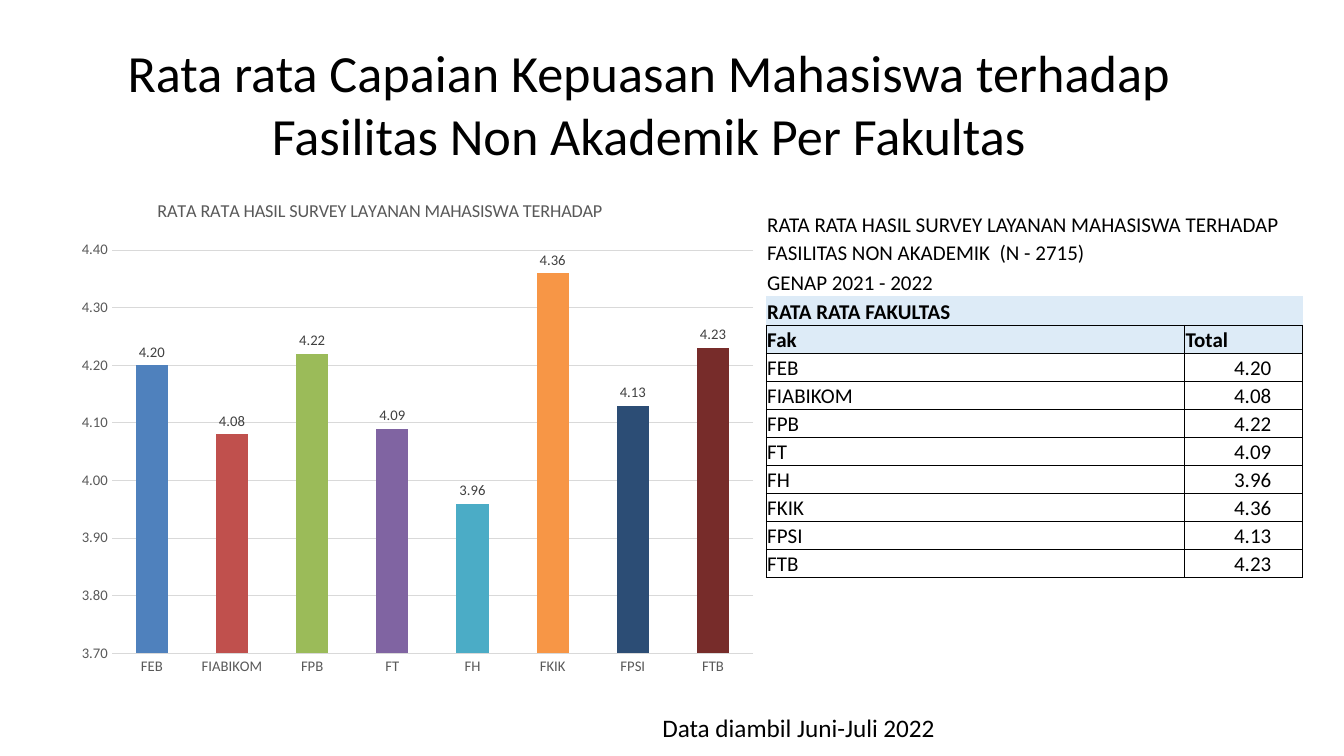
from dataclasses import dataclass
from typing import Any, Optional

import lxml.etree
import pptx
import pptx.chart.chart
import pptx.chart.data
import pptx.dml.color
import pptx.enum.chart
import pptx.enum.text
import pptx.oxml
import pptx.oxml.ns
import pptx.slide
import pptx.table
import pptx.text.text
import pptx.util

ALIGN = pptx.enum.text.PP_ALIGN
ANCHOR = pptx.enum.text.MSO_ANCHOR
SLIDE_WIDTH = pptx.util.Inches(13.33)
SLIDE_HEIGHT = pptx.util.Inches(7.5)


@dataclass(frozen=True)
class Theme:
    font: str = "Calibri"
    text: str = "000000"
    axis: str = "595959"
    label: str = "404040"
    grid: str = "D9D9D9"
    header: str = "DDEBF7"
    title_size: float = 37.3
    note_size: float = 18
    table_size: float = 15
    chart_title_size: float = 13
    chart_size: float = 10.5
    border_width: float = 0.5
    grid_width: float = 0.75


@dataclass(frozen=True)
class Region:
    left: float
    top: float
    width: float
    height: float

    def box(self) -> tuple[int, int, int, int]:
        return (
            round(SLIDE_WIDTH * self.left / 100),
            round(SLIDE_HEIGHT * self.top / 100),
            round(SLIDE_WIDTH * self.width / 100),
            round(SLIDE_HEIGHT * self.height / 100),
        )


@dataclass(frozen=True)
class Faculty:
    name: str
    score: float
    color: str


@dataclass(frozen=True)
class TableRow:
    first: str
    second: str = ""
    bold: bool = False
    fill: Optional[str] = None
    merged: bool = False
    borders: str = "LRTB"
    score: bool = False


THEME = Theme()
TITLE_REGION = Region(5.78, 2.93, 85, 21.47)
CHART_REGION = Region(4.65, 24.53, 52.44, 65.87)
TABLE_REGION = Region(57.01, 27.87, 39.91, 48.13)
NOTE_REGION = Region(48.54, 93.6, 22.28, 5.33)
FIRST_COLUMN_SHARE = 0.78
SURVEY = "RATA RATA HASIL SURVEY LAYANAN MAHASISWA TERHADAP"

FACULTIES = [
    Faculty("FEB", 4.20, "4F81BD"),
    Faculty("FIABIKOM", 4.08, "C0504D"),
    Faculty("FPB", 4.22, "9BBB59"),
    Faculty("FT", 4.09, "8064A2"),
    Faculty("FH", 3.96, "4BACC6"),
    Faculty("FKIK", 4.36, "F79646"),
    Faculty("FPSI", 4.13, "2C4D75"),
    Faculty("FTB", 4.23, "772C2A"),
]
TABLE_ROWS = [
    TableRow(SURVEY, merged=True, borders=""),
    TableRow("FASILITAS NON AKADEMIK  (N - 2715)", merged=True, borders=""),
    TableRow("GENAP 2021 - 2022", borders=""),
    TableRow("RATA RATA FAKULTAS", bold=True, fill=THEME.header, borders="B"),
    TableRow("Fak", "Total", bold=True, fill=THEME.header),
] + [TableRow(faculty.name, f"{faculty.score:.2f}", score=True) for faculty in FACULTIES]


def rgb(color: str) -> pptx.dml.color.RGBColor:
    return pptx.dml.color.RGBColor.from_string(color)


def format_font(font: pptx.text.text.Font, size: float, color: str, bold: bool = False) -> None:
    font.name = THEME.font
    font.size = pptx.util.Pt(size)
    font.bold = bold
    font.color.rgb = rgb(color)


def write_text(
    frame: pptx.text.text.TextFrame,
    text: str,
    *,
    size: float,
    color: str = THEME.text,
    bold: bool = False,
    alignment: Any = ALIGN.LEFT,
) -> None:
    paragraph = frame.paragraphs[0]
    paragraph.alignment = alignment
    run = paragraph.add_run()
    run.text = text
    format_font(run.font, size, color, bold)


def place_chart_part(parent: Any, index: int, **shares: float) -> None:
    for layout in parent.findall(pptx.oxml.ns.qn("c:layout")):
        parent.remove(layout)
    layout = pptx.oxml.parse_xml(
        f'<c:layout {pptx.oxml.ns.nsdecls("c")}><c:manualLayout/></c:layout>'
    )
    manual = layout[0]
    settings: dict[str, Any] = {"xMode": "edge", "yMode": "edge", **shares}
    if "w" in shares:
        settings = {"layoutTarget": "inner", **settings}
    for name, value in settings.items():
        lxml.etree.SubElement(manual, pptx.oxml.ns.qn(f"c:{name}")).set("val", str(value))
    parent.insert(index, layout)


def format_axis(axis: Any) -> None:
    axis.major_tick_mark = pptx.enum.chart.XL_TICK_MARK.NONE
    axis.minor_tick_mark = pptx.enum.chart.XL_TICK_MARK.NONE
    axis.format.line.fill.background()
    format_font(axis.tick_labels.font, THEME.chart_size, THEME.axis)


def add_score_chart(slide: pptx.slide.Slide) -> None:
    data = pptx.chart.data.CategoryChartData(number_format="0.00")
    data.categories = [faculty.name for faculty in FACULTIES]
    data.add_series("Series 1", [faculty.score for faculty in FACULTIES])
    chart = slide.shapes.add_chart(
        pptx.enum.chart.XL_CHART_TYPE.COLUMN_CLUSTERED, *CHART_REGION.box(), data
    ).chart
    format_font(chart.font, THEME.chart_size, THEME.text)
    chart.has_legend = False
    write_text(
        chart.chart_title.text_frame, SURVEY,
        size=THEME.chart_title_size, color=THEME.axis, alignment=ALIGN.CENTER,
    )
    title_element = chart.chart_title.text_frame._txBody.getparent().getparent()
    place_chart_part(title_element, 1, x=0.13, y=0.02)
    plot_area = chart.plots[0]._element.getparent()
    place_chart_part(plot_area, 0, x=0.07, y=0.13, w=0.91, h=0.81)

    format_axis(chart.category_axis)
    value_axis = chart.value_axis
    format_axis(value_axis)
    value_axis.minimum_scale, value_axis.maximum_scale = 3.7, 4.4
    value_axis.major_unit = 0.1
    value_axis.tick_labels.number_format = "0.00"
    value_axis.tick_labels.number_format_is_linked = False
    grid_line = value_axis.major_gridlines.format.line
    grid_line.color.rgb = rgb(THEME.grid)
    grid_line.width = pptx.util.Pt(THEME.grid_width)

    plot = chart.plots[0]
    plot.gap_width = 150
    plot.vary_by_categories = False
    plot.has_data_labels = True
    labels = plot.data_labels
    labels.show_value = True
    labels.number_format = "0.00"
    labels.number_format_is_linked = False
    labels.position = pptx.enum.chart.XL_LABEL_POSITION.OUTSIDE_END
    format_font(labels.font, THEME.chart_size, THEME.label)
    for index, faculty in enumerate(FACULTIES):
        fill = plot.series[0].points[index].format.fill
        fill.solid()
        fill.fore_color.rgb = rgb(faculty.color)


def set_borders(cell: pptx.table._Cell, sides: str) -> None:
    properties = cell._tc.get_or_add_tcPr()
    for index, side in enumerate("LRTB"):
        paint = (
            f'<a:solidFill><a:srgbClr val="{THEME.text}"/></a:solidFill>'
            if side in sides else "<a:noFill/>"
        )
        width = pptx.util.Pt(THEME.border_width)
        properties.insert(index, pptx.oxml.parse_xml(
            f'<a:ln{side} {pptx.oxml.ns.nsdecls("a")} w="{width}">{paint}</a:ln{side}>'
        ))


def format_cell(cell: pptx.table._Cell, text: str, row: TableRow, is_score: bool) -> None:
    cell.margin_left = cell.margin_top = pptx.util.Inches(0.01)
    cell.margin_right = pptx.util.Inches(0.31 if is_score else 0.01)
    cell.margin_bottom = 0
    cell.vertical_anchor = ANCHOR.BOTTOM
    if row.fill:
        cell.fill.solid()
        cell.fill.fore_color.rgb = rgb(row.fill)
    else:
        cell.fill.background()
    set_borders(cell, row.borders)
    write_text(
        cell.text_frame, text, size=THEME.table_size, bold=row.bold,
        alignment=ALIGN.RIGHT if is_score else ALIGN.LEFT,
    )


def add_score_table(slide: pptx.slide.Slide) -> None:
    left, top, width, height = TABLE_REGION.box()
    table = slide.shapes.add_table(len(TABLE_ROWS), 2, left, top, width, height).table
    table.first_row = table.horz_banding = False
    table.columns[0].width = round(width * FIRST_COLUMN_SHARE)
    table.columns[1].width = width - table.columns[0].width
    for index, row in enumerate(TABLE_ROWS):
        table.rows[index].height = height // len(TABLE_ROWS)
        format_cell(table.cell(index, 0), row.first, row, False)
        format_cell(table.cell(index, 1), row.second, row, row.score)
        if row.merged:
            table.cell(index, 0).merge(table.cell(index, 1))


def add_title(slide: pptx.slide.Slide) -> None:
    title = slide.shapes.title
    title.left, title.top, title.width, title.height = TITLE_REGION.box()
    title.text_frame.auto_size = pptx.enum.text.MSO_AUTO_SIZE.NONE
    title.text_frame.vertical_anchor = ANCHOR.MIDDLE
    write_text(
        title.text_frame,
        "Rata rata Capaian Kepuasan Mahasiswa terhadap Fasilitas Non Akademik Per Fakultas",
        size=THEME.title_size, alignment=ALIGN.CENTER,
    )


def add_note(slide: pptx.slide.Slide) -> None:
    frame = slide.shapes.add_textbox(*NOTE_REGION.box()).text_frame
    frame.word_wrap = True
    frame.auto_size = pptx.enum.text.MSO_AUTO_SIZE.SHAPE_TO_FIT_TEXT
    write_text(frame, "Data diambil Juni-Juli 2022", size=THEME.note_size)


def main() -> None:
    presentation = pptx.Presentation()
    presentation.slide_width, presentation.slide_height = SLIDE_WIDTH, SLIDE_HEIGHT
    slide = presentation.slides.add_slide(presentation.slide_layouts.get_by_name("Title Only"))
    add_title(slide)
    add_score_chart(slide)
    add_score_table(slide)
    add_note(slide)
    presentation.save("out.pptx")


if __name__ == "__main__":
    main()
